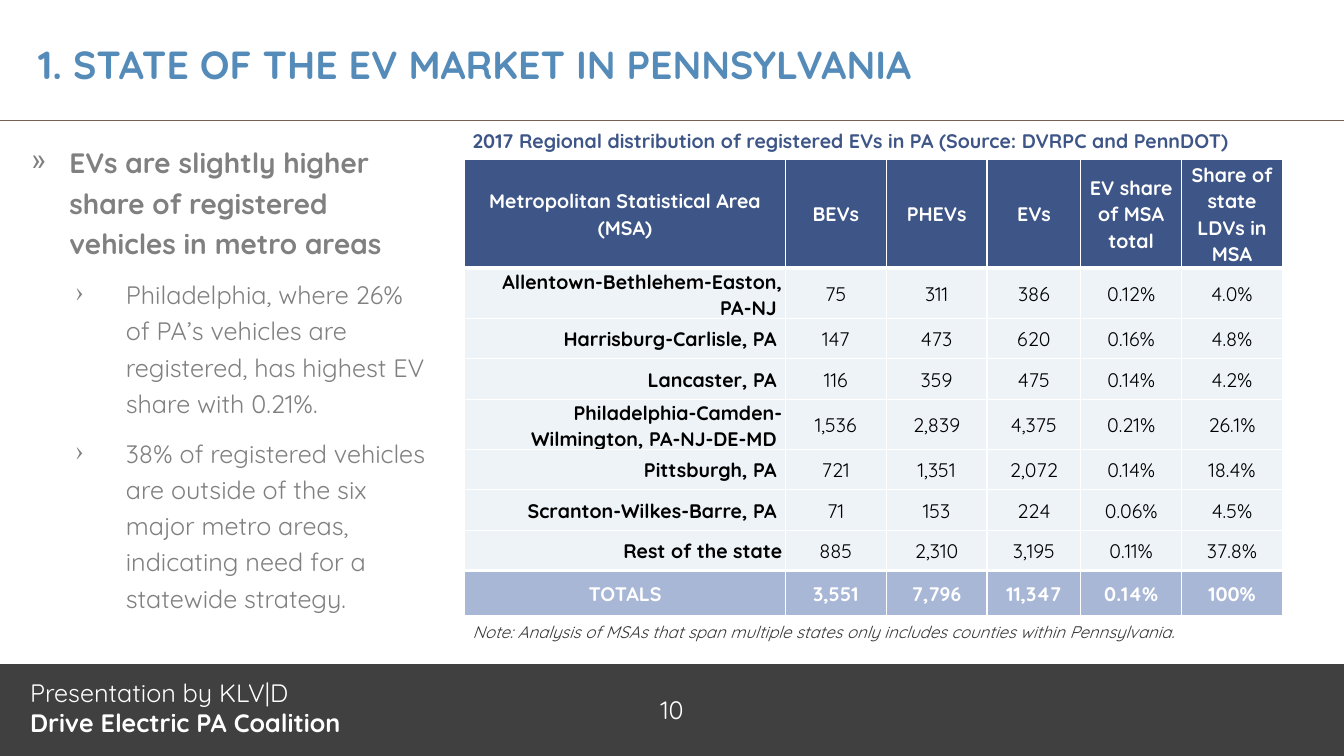
from lxml.etree import SubElement
from pptx import Presentation
from pptx.dml.color import RGBColor
from pptx.enum.shapes import MSO_CONNECTOR, MSO_SHAPE
from pptx.enum.text import MSO_ANCHOR, PP_ALIGN
from pptx.oxml.ns import qn
from pptx.util import Inches, Pt

WHITE = RGBColor(0xFF, 0xFF, 0xFF)
BLACK = RGBColor(0x00, 0x00, 0x00)
CHARCOAL = RGBColor(0x40, 0x40, 0x40)
NOTE_GRAY = RGBColor(0x36, 0x36, 0x36)
BODY_GRAY = RGBColor(0x80, 0x80, 0x80)
RULE_BROWN = RGBColor(0x77, 0x5F, 0x55)
TITLE_BLUE = RGBColor(0x55, 0x8B, 0xB8)
NAVY = RGBColor(0x3E, 0x55, 0x87)
PALE_BLUE = RGBColor(0xEE, 0xF3, 0xF7)
TOTAL_BLUE = RGBColor(0xA9, 0xB7, 0xD7)

SLIDE_WIDTH = 13.33
FOOTER_TOP = 6.58
COLUMN_WIDTHS = [3.18, 1, 1, 0.93, 1, 1]
ROW_HEIGHTS = [1.08] + [0.4] * 7 + [0.45]
MARKET_ROWS = [
    ["Metropolitan Statistical Area (MSA)", "BEVs", "PHEVs", "EVs",
     "EV share of MSA total", "Share of state LDVs in MSA"],
    ["Allentown-Bethlehem-Easton, PA-NJ ", "75", "311", "386", "0.12%", "4.0%"],
    ["Harrisburg-Carlisle, PA ", "147", "473", "620", "0.16%", "4.8%"],
    ["Lancaster, PA ", "116", "359", "475", "0.14%", "4.2%"],
    ["Philadelphia-Camden-Wilmington, PA-NJ-DE-MD ", "1,536", "2,839", "4,375", "0.21%", "26.1%"],
    ["Pittsburgh, PA ", "721", "1,351", "2,072", "0.14%", "18.4%"],
    ["Scranton-Wilkes-Barre, PA ", "71", "153", "224", "0.06%", "4.5%"],
    ["Rest of the state", "885", "2,310", "3,195", "0.11%", "37.8%"],
    ["TOTALS", "3,551", "7,796", "11,347", "0.14%", "100%"],
]
FINDINGS = [
    (0, "EVs are slightly higher share of registered vehicles in metro areas"),
    (1, "Philadelphia, where 26% of PA’s vehicles are registered, has highest EV share with 0.21%."),
    (1, "38% of registered vehicles are outside of the six major metro areas, "
        "indicating need for a statewide strategy."),
]


class SlideBuilder:
    """Draws styled elements on one slide."""

    def __init__(self, slide, font_name):
        self.slide = slide
        self.font_name = font_name

    def format_runs(self, paragraph, size, color, bold=False, italic=False):
        for run in paragraph.runs:
            font = run.font
            font.name = self.font_name
            font.size = Pt(size)
            font.color.rgb = color
            font.bold = bold
            font.italic = italic

    def text(self, left, top, width, height, text, size, color, bold=False, italic=False):
        box = self.slide.shapes.add_textbox(
            Inches(left), Inches(top), Inches(width), Inches(height))
        text_frame = box.text_frame
        text_frame.word_wrap = True
        text_frame.text = text
        for paragraph in text_frame.paragraphs:
            self.format_runs(paragraph, size, color, bold, italic)
        return text_frame

    def band(self, top, height, text):
        shape = self.slide.shapes.add_shape(
            MSO_SHAPE.RECTANGLE, 0, Inches(top), Inches(SLIDE_WIDTH), Inches(height))
        shape.shadow.inherit = False
        shape.fill.solid()
        shape.fill.fore_color.rgb = CHARCOAL
        shape.line.fill.background()
        text_frame = shape.text_frame
        text_frame.text = text
        text_frame.vertical_anchor = MSO_ANCHOR.MIDDLE
        paragraph = text_frame.paragraphs[0]
        paragraph.alignment = PP_ALIGN.CENTER
        self.format_runs(paragraph, 18, WHITE)

    def rule(self, top, color):
        line = self.slide.shapes.add_connector(
            MSO_CONNECTOR.STRAIGHT, 0, Inches(top), Inches(SLIDE_WIDTH), Inches(top))
        line.line.color.rgb = color
        line.line.width = Pt(0.75)
        SubElement(line._element.spPr, qn("a:effectLst"))

    def bullets(self, left, top, width, height, items):
        text = "\n".join(item for _, item in items)
        text_frame = self.text(left, top, width, height, text, 18, BODY_GRAY)
        for index, (level, _) in enumerate(items):
            paragraph = text_frame.paragraphs[index]
            margin, indent, marker, size = [(0.38, -0.38, "»", 20), (0.94, -0.5, "›", 18)][level]
            paragraph.level = level
            paragraph.line_spacing = 1.2
            paragraph.space_after = Pt(6)
            if index:
                paragraph.space_before = Pt(size * 0.2)
            properties = paragraph._p.get_or_add_pPr()
            properties.set("marL", str(Inches(margin)))
            properties.set("indent", str(Inches(indent)))
            SubElement(properties, qn("a:buChar"), char=marker)
            self.format_runs(paragraph, size, BODY_GRAY, level == 0)

    def cell(self, cell, text, fill, color, bold, alignment, top_border, bottom_border):
        cell.text_frame.text = text
        cell.vertical_anchor = MSO_ANCHOR.MIDDLE
        cell.margin_left = cell.margin_right = Inches(0.03)
        cell.margin_top = cell.margin_bottom = 0
        paragraph = cell.text_frame.paragraphs[0]
        paragraph.alignment = alignment
        paragraph.line_spacing = 1.07
        self.format_runs(paragraph, 14, color, bold)
        properties = cell._tc.get_or_add_tcPr()
        borders = {"a:lnL": 1, "a:lnR": 1, "a:lnT": top_border, "a:lnB": bottom_border}
        for side, width in borders.items():
            border = SubElement(properties, qn(side), w=str(Pt(width)))
            SubElement(SubElement(border, qn("a:solidFill")), qn("a:srgbClr"), val=str(WHITE))
        cell.fill.solid()
        cell.fill.fore_color.rgb = fill

    def table(self, left, top, rows):
        frame = self.slide.shapes.add_table(
            len(rows), len(COLUMN_WIDTHS), Inches(left), Inches(top),
            Inches(sum(COLUMN_WIDTHS)), Inches(sum(ROW_HEIGHTS)))
        table = frame.table
        table.horz_banding = False
        for column, width in zip(table.columns, COLUMN_WIDTHS):
            column.width = Inches(width)
        for row, height in zip(table.rows, ROW_HEIGHTS):
            row.height = Inches(height)
        last = len(rows) - 1
        for row_index, values in enumerate(rows):
            is_body = 0 < row_index < last
            fill = PALE_BLUE if is_body else NAVY if row_index == 0 else TOTAL_BLUE
            top_border = 3 if row_index in (1, last) else 1
            bottom_border = 3 if row_index in (0, last - 1) else 1
            for column_index, value in enumerate(values):
                is_area = is_body and column_index == 0
                self.cell(
                    table.cell(row_index, column_index), value, fill,
                    BLACK if is_body else WHITE, is_area or not is_body,
                    PP_ALIGN.RIGHT if is_area else PP_ALIGN.CENTER,
                    top_border, bottom_border)


def main():
    presentation = Presentation()
    presentation.slide_width = Inches(SLIDE_WIDTH)
    presentation.slide_height = Inches(7.5)
    slide = presentation.slides.add_slide(presentation.slide_layouts[6])
    builder = SlideBuilder(slide, "Quicksand")

    builder.band(FOOTER_TOP, 0.92, "10")
    builder.rule(FOOTER_TOP, WHITE)
    footer = builder.text(0.2, 6.67, 4.89, 0.7,
                          "Presentation by KLV|D\nDrive Electric PA Coalition", 18, WHITE)
    builder.format_runs(footer.paragraphs[1], 18, WHITE, bold=True)
    builder.rule(1.2, RULE_BROWN)
    builder.text(0.28, 0.35, 12.67, 0.87, "1. STATE OF THE EV MARKET IN PENNSYLVANIA",
                 28, TITLE_BLUE, bold=True)
    builder.table(4.61, 1.58, MARKET_ROWS)
    note = builder.text(
        4.59, 6.12, 7.56, 0.3,
        "Note: Analysis of MSAs that span multiple states only includes counties within Pennsylvania.",
        12, NOTE_GRAY, italic=True)
    note.word_wrap = False
    note.vertical_anchor = MSO_ANCHOR.MIDDLE
    note.paragraphs[0].alignment = PP_ALIGN.JUSTIFY
    builder.text(4.59, 1.23, 8.7, 0.34,
                 "2017 Regional distribution of registered EVs in PA (Source: DVRPC and PennDOT)",
                 14, NAVY, bold=True)
    builder.bullets(0.21, 1.33, 4.11, 1.86, FINDINGS)
    presentation.save("out.pptx")


if __name__ == "__main__":
    main()
